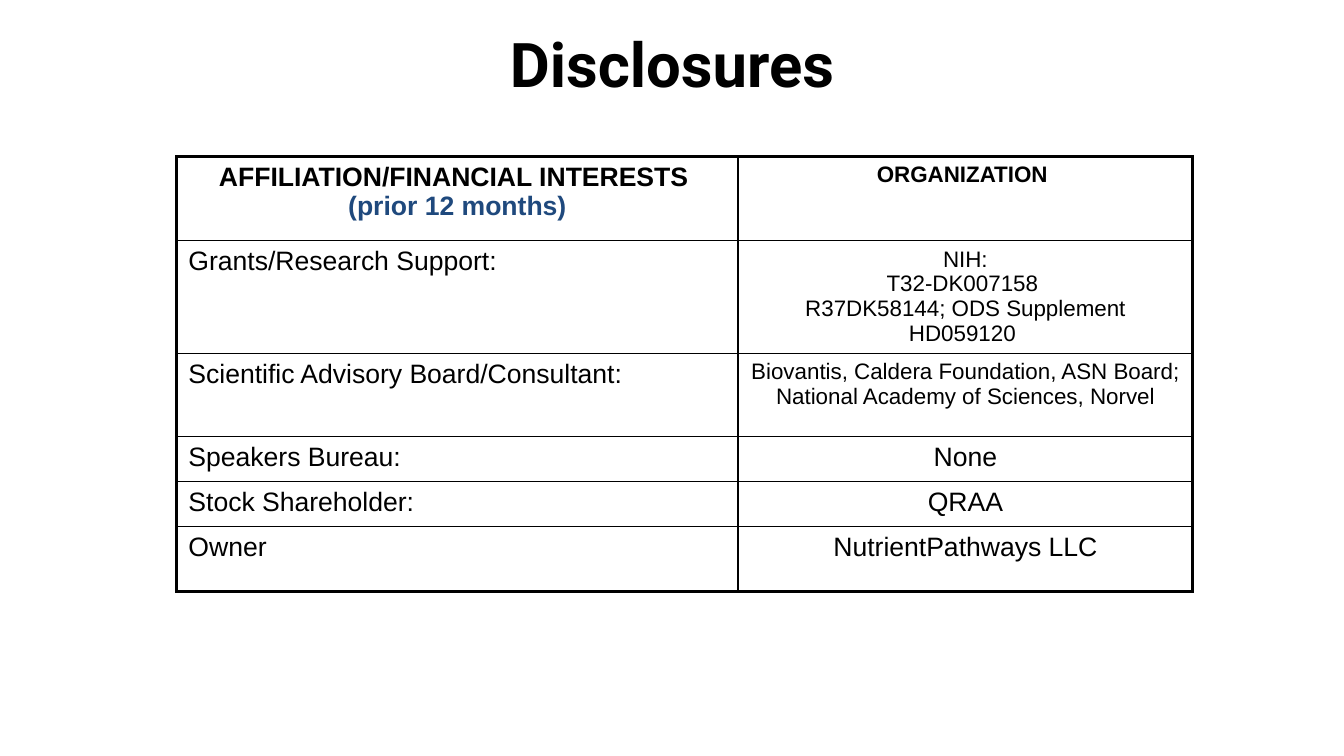
from lxml import etree
from pptx import Presentation
from pptx.dml.color import RGBColor
from pptx.enum.text import MSO_ANCHOR, PP_ALIGN
from pptx.oxml.ns import qn
from pptx.util import Cm, Pt

CENTER, LEFT = PP_ALIGN.CENTER, PP_ALIGN.LEFT
MIDDLE, TOP = MSO_ANCHOR.MIDDLE, MSO_ANCHOR.TOP
COLORS = {"black": "000000", "white": "FFFFFF", "navy": "1F497D"}

TITLE = "Disclosures"
LARGE, SMALL = 19, 16
# Each cell: its lines of text and their size
ROWS = [
    ((["AFFILIATION/FINANCIAL INTERESTS ", "(prior 12 months)"], LARGE),
     (["ORGANIZATION "], SMALL)),
    ((["Grants/Research Support:"], LARGE),
     (["NIH:", "T32-DK007158 ", "R37DK58144; ODS Supplement", "HD059120 "], SMALL)),
    ((["Scientific Advisory Board/Consultant:"], LARGE),
     (["Biovantis, Caldera Foundation, ASN Board; "
       "National Academy of Sciences, Norvel"], SMALL)),
    ((["Speakers Bureau:"], LARGE), (["None"], LARGE)),
    ((["Stock Shareholder:"], LARGE), (["QRAA"], LARGE)),
    ((["Owner"], LARGE), (["NutrientPathways LLC"], LARGE)),
]
COLUMN_WIDTHS = [14.15, 11.46]
ROW_HEIGHTS = [2.13, 2.84, 2.08, 1.14, 1.14, 1.63]
TABLE_LEFT, TABLE_TOP = 4.45, 3.94
OUTER_LINE, INNER_LINE = 2.25, 1


def add_span(para, text, font_name, size, bold, color):
    span = para.add_run()
    span.text = text
    span.font.name = font_name
    span.font.size = Pt(size)
    span.font.bold = bold
    span.font.color.rgb = RGBColor.from_string(COLORS[color])


def add_borders(cell, row, column):
    """Draw the cell's lines, heavier along the table's outer edge."""
    outer_sides = {
        "lnL": column == 0,
        "lnR": column == len(COLUMN_WIDTHS) - 1,
        "lnT": row == 0,
        "lnB": row == len(ROWS) - 1,
    }
    properties = cell._tc.get_or_add_tcPr()
    for side, is_outer in outer_sides.items():
        width = Pt(OUTER_LINE if is_outer else INNER_LINE)
        line = etree.SubElement(properties, qn(f"a:{side}"), w=str(width))
        fill = etree.SubElement(line, qn("a:solidFill"))
        etree.SubElement(fill, qn("a:srgbClr"), val=COLORS["black"])


def fill_cell(cell, row, column, lines, size):
    add_borders(cell, row, column)
    cell.fill.solid()
    cell.fill.fore_color.rgb = RGBColor.from_string(COLORS["white"])
    cell.margin_left = cell.margin_right = Cm(0.3)
    cell.margin_top = cell.margin_bottom = Cm(0.15)
    cell.vertical_anchor = TOP
    is_header = row == 0
    for index, text in enumerate(lines):
        para = cell.text_frame.paragraphs[0] if index == 0 else cell.text_frame.add_paragraph()
        para.alignment = CENTER if is_header or column == 1 else LEFT
        color = "navy" if is_header and index == 1 else "black"
        add_span(para, text, "Arial", size, is_header, color)


def add_title(page):
    title = page.shapes.title
    title.left, title.top, title.width, title.height = Cm(1.7), Cm(0), Cm(30.48), Cm(3.18)
    title.text_frame.vertical_anchor = MIDDLE
    para = title.text_frame.paragraphs[0]
    para.alignment = CENTER
    add_span(para, TITLE, "Roboto", 44, True, "black")


def add_disclosure_table(page):
    frame = page.shapes.add_table(
        len(ROWS), len(COLUMN_WIDTHS), Cm(TABLE_LEFT), Cm(TABLE_TOP),
        Cm(sum(COLUMN_WIDTHS)), Cm(sum(ROW_HEIGHTS)))
    table = frame.table
    table.horz_banding = False
    for column, width in zip(table.columns, COLUMN_WIDTHS):
        column.width = Cm(width)
    for row, height in zip(table.rows, ROW_HEIGHTS):
        row.height = Cm(height)
    for row, cells in enumerate(ROWS):
        for column, (lines, size) in enumerate(cells):
            fill_cell(table.cell(row, column), row, column, lines, size)


def main():
    deck = Presentation()
    deck.slide_width, deck.slide_height = Cm(33.87), Cm(19.05)
    page = deck.slides.add_slide(deck.slide_layouts[5])
    add_title(page)
    add_disclosure_table(page)
    deck.save("out.pptx")


if __name__ == "__main__":
    main()
